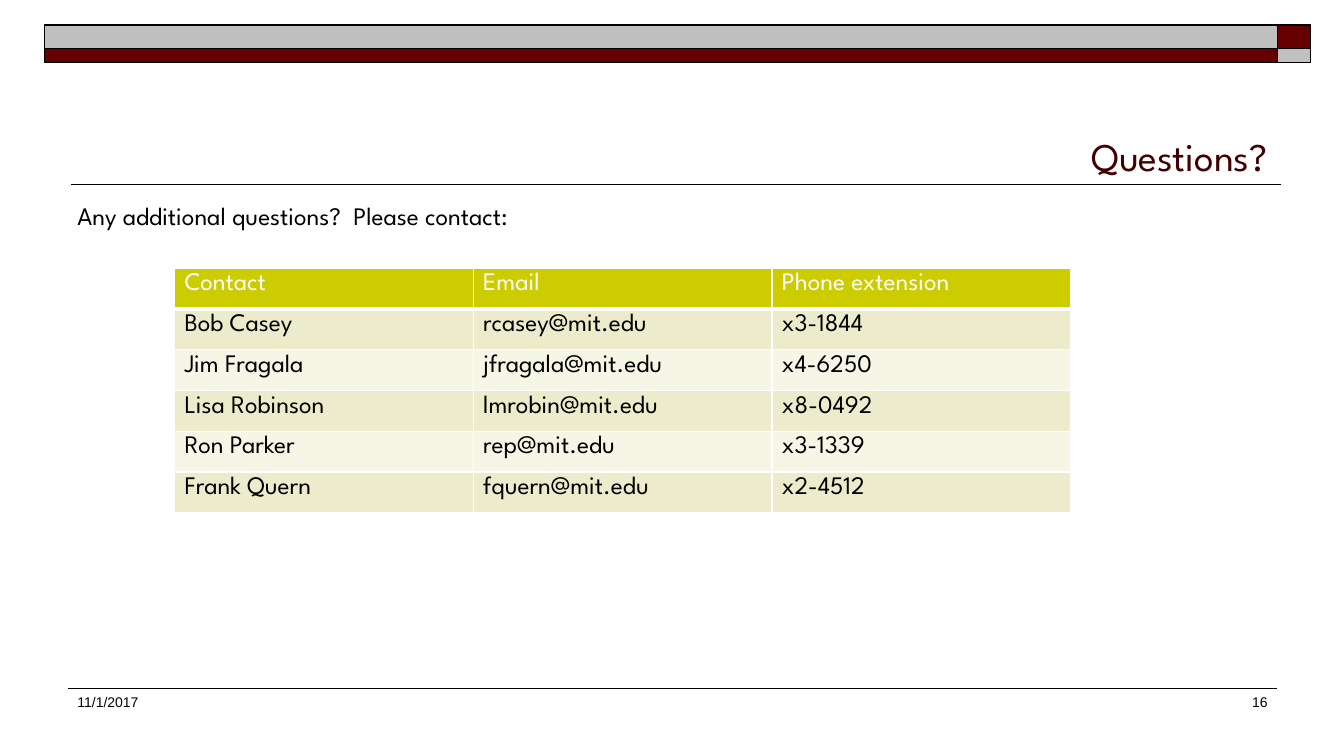
from lxml import etree
from pptx import Presentation
from pptx.dml.color import RGBColor
from pptx.enum.shapes import MSO_CONNECTOR, MSO_SHAPE
from pptx.enum.text import MSO_ANCHOR, PP_ALIGN
from pptx.oxml.ns import qn
from pptx.util import Inches, Pt

BLACK = RGBColor(0x00, 0x00, 0x00)
WHITE = RGBColor(0xFF, 0xFF, 0xFF)
MAROON = RGBColor(0x66, 0x00, 0x00)
TITLE_MAROON = RGBColor(0x42, 0x00, 0x00)
SILVER = RGBColor(0xC0, 0xC0, 0xC0)
LIME = RGBColor(0xCC, 0xCC, 0x00)
BAND_DARK = RGBColor(0xEC, 0xEC, 0xCC)
BAND_LIGHT = RGBColor(0xF6, 0xF6, 0xE7)

RECTANGLE = MSO_SHAPE.RECTANGLE
STRAIGHT = MSO_CONNECTOR.STRAIGHT
LEFT, RIGHT = PP_ALIGN.LEFT, PP_ALIGN.RIGHT
TOP, BOTTOM = MSO_ANCHOR.TOP, MSO_ANCHOR.BOTTOM
HEADING_FONT, FOOTER_FONT = "League Spartan", "Arial"

deck = Presentation()
deck.slide_width, deck.slide_height = Inches(13.33), Inches(7.5)
page = deck.slides.add_slide(deck.slide_layouts[6])


def write(para, text, font_format):
    span = para.add_run()
    span.text = text
    for name, value in font_format.items():
        if name == "color":
            span.font.color.rgb = value
        else:
            setattr(span.font, name, value)


# Rules below the title and above the footer
for left, right, y, width in [(0.7, 12.71, 1.83, 1), (0.67, 12.67, 6.83, 0.75)]:
    rule = page.shapes.add_connector(
        STRAIGHT, Inches(left), Inches(y), Inches(right), Inches(y))
    rule.line.color.rgb = BLACK
    rule.line.width = Pt(width)
    etree.SubElement(rule._element.spPr, qn("a:effectLst"))

# Top band: two rows, with the colours swapped in the end blocks
for top, height, bar_color, end_color in [(0.25, 0.23, SILVER, MAROON),
                                          (0.48, 0.14, MAROON, SILVER)]:
    for left, width, color in [(0.44, 12.23, bar_color), (12.67, 0.33, end_color)]:
        block = page.shapes.add_shape(
            RECTANGLE, Inches(left), Inches(top), Inches(width), Inches(height))
        block.shadow.inherit = False
        block.fill.solid()
        block.fill.fore_color.rgb = color
        block.line.color.rgb = BLACK
        block.line.width = Pt(1)

# Title, lead sentence, date and page number
title_format = {"name": HEADING_FONT, "size": Pt(28), "color": TITLE_MAROON}
body_format = {"name": HEADING_FONT, "size": Pt(18), "color": BLACK}
footer_format = {"name": FOOTER_FONT, "size": Pt(10), "color": BLACK}
texts = [
    ("Questions?", (0.67, 0.58, 12, 1.25), title_format, RIGHT, BOTTOM, 1.0),
    ("Any additional questions?  Please contact:", (0.67, 2, 12, 0.5),
     body_format, LEFT, TOP, 0.8),
    ("11/1/2017", (0.67, 6.83, 2.44, 0.5), footer_format, LEFT, TOP, 1.0),
    ("16", (9.89, 6.83, 2.78, 0.5), footer_format, RIGHT, TOP, 1.0),
]
for text, place, font_format, alignment, anchor, spacing in texts:
    box = page.shapes.add_textbox(*[Inches(length) for length in place])
    box.text_frame.word_wrap = True
    box.text_frame.vertical_anchor = anchor
    para = box.text_frame.paragraphs[0]
    para.alignment = alignment
    para.line_spacing = spacing
    write(para, text, font_format)

# Contact table
contacts = [
    ("Contact", "Email", "Phone extension"),
    ("Bob Casey", "rcasey@mit.edu", "x3-1844"),
    ("Jim Fragala", "jfragala@mit.edu", "x4-6250"),
    ("Lisa Robinson", "lmrobin@mit.edu", "x8-0492"),
    ("Ron Parker", "rep@mit.edu", "x3-1339"),
    ("Frank Quern", "fquern@mit.edu", "x2-4512"),
]
table = page.shapes.add_table(len(contacts), 3, Inches(1.73), Inches(2.66),
                              Inches(8.89), Inches(2.43)).table
for row_index, contact in enumerate(contacts):
    is_header = row_index == 0
    if is_header:
        fill_color, text_color = LIME, WHITE
    else:
        fill_color = BAND_DARK if row_index % 2 else BAND_LIGHT
        text_color = BLACK
    for column_index, text in enumerate(contact):
        cell = table.cell(row_index, column_index)
        properties = cell._tc.get_or_add_tcPr()
        for side in ("lnL", "lnR", "lnT", "lnB"):
            width = 3 if is_header and side == "lnB" else 1
            border = etree.SubElement(properties, qn(f"a:{side}"), w=str(Pt(width)))
            border_fill = etree.SubElement(border, qn("a:solidFill"))
            etree.SubElement(border_fill, qn("a:srgbClr"), val=str(WHITE))
        cell.fill.solid()
        cell.fill.fore_color.rgb = fill_color
        write(cell.text_frame.paragraphs[0], text, {**body_format, "color": text_color})

deck.save("out.pptx")
